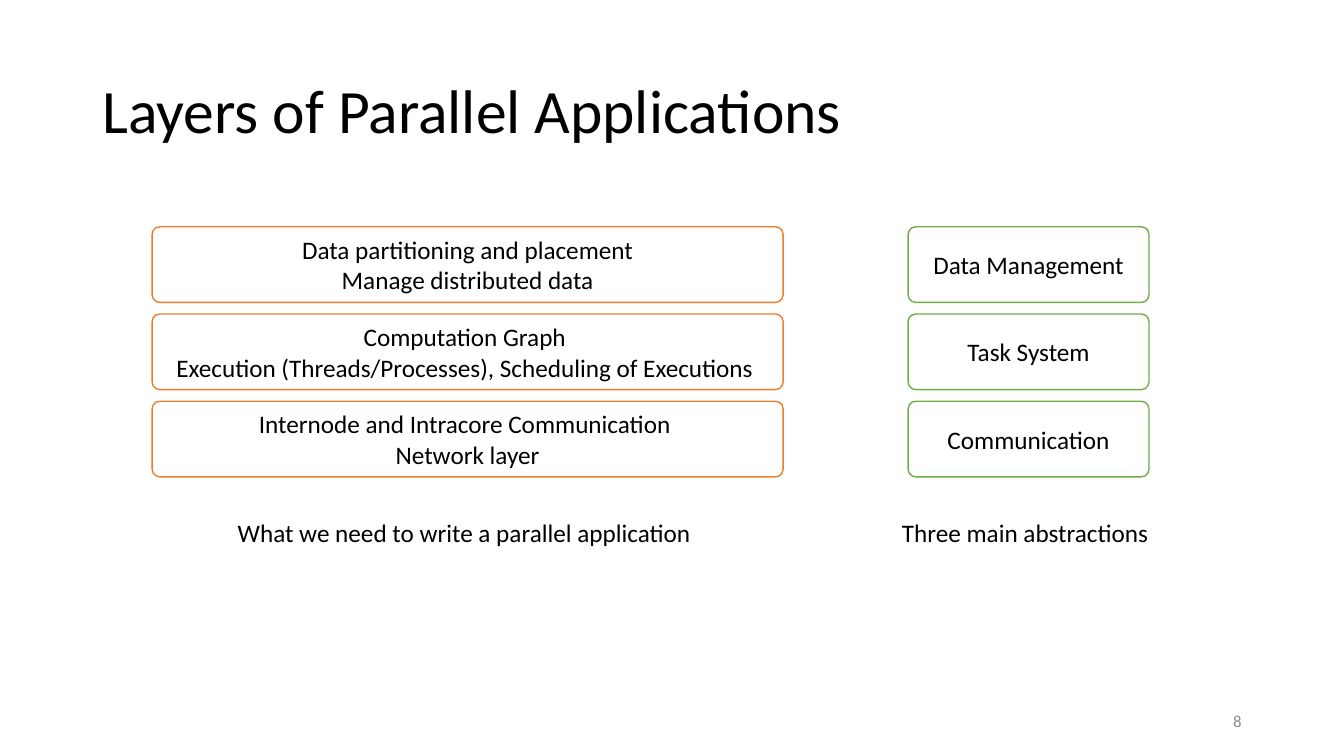
from dataclasses import dataclass

import pptx
import pptx.dml.color
import pptx.enum.shapes
import pptx.enum.text
import pptx.util

Pt = pptx.util.Pt
ALIGN = pptx.enum.text.PP_ALIGN
ANCHOR = pptx.enum.text.MSO_ANCHOR

FONT = "Calibri"
COLORS = {
    "text": "000000",
    "page number": "8C8C8C",
    "box": "FFFFFF",
    "needs": "ED7D31",
    "abstractions": "70AD47",
}
LAYER_TOP, LAYER_PITCH, LAYER_HEIGHT = 162, 62.3, 54
CAPTION_TOP, CAPTION_HEIGHT = 365.8, 29


@dataclass(frozen=True)
class LayerStack:
    """A column of layers, top to bottom, with a caption underneath."""
    left: float
    width: float
    color: str
    layers: tuple[tuple[str, ...], ...]
    caption: str
    caption_left: float
    caption_width: float


STACKS = (
    LayerStack(
        108.7, 450.7, "needs",
        (
            ("Data partitioning and placement", "Manage distributed data"),
            ("Computation Graph ",
             "Execution (Threads/Processes), Scheduling of Executions "),
            ("Internode and Intracore Communication ", "Network layer"),
        ),
        "What we need to write a parallel application", 162.7, 342,
    ),
    LayerStack(
        648.7, 172, "abstractions",
        (("Data Management",), ("Task System",), ("Communication",)),
        "Three main abstractions", 637.2, 192.2,
    ),
)


def rgb(name: str) -> pptx.dml.color.RGBColor:
    return pptx.dml.color.RGBColor.from_string(COLORS[name])


def write(frame, lines: tuple[str, ...], size: float = 18, color: str = "text",
          align=ALIGN.LEFT, anchor=ANCHOR.MIDDLE, wrap: bool = True) -> None:
    frame.word_wrap = wrap
    frame.vertical_anchor = anchor
    for index, line in enumerate(lines):
        paragraph = frame.add_paragraph() if index else frame.paragraphs[0]
        paragraph.alignment = align
        run = paragraph.add_run()
        run.text = line
        run.font.name = FONT
        run.font.size = Pt(size)
        run.font.color.rgb = rgb(color)


def draw_stack(slide, stack: LayerStack) -> None:
    for row, lines in enumerate(stack.layers):
        layer = slide.shapes.add_shape(
            pptx.enum.shapes.MSO_SHAPE.ROUNDED_RECTANGLE,
            Pt(stack.left), Pt(LAYER_TOP + row * LAYER_PITCH),
            Pt(stack.width), Pt(LAYER_HEIGHT))
        layer.adjustments[0] = 0.1
        layer.shadow.inherit = False
        layer.fill.solid()
        layer.fill.fore_color.rgb = rgb("box")
        layer.line.color.rgb = rgb(stack.color)
        layer.line.width = Pt(1)
        write(layer.text_frame, lines, align=ALIGN.CENTER)

    caption = slide.shapes.add_textbox(
        Pt(stack.caption_left), Pt(CAPTION_TOP),
        Pt(stack.caption_width), Pt(CAPTION_HEIGHT))
    write(caption.text_frame, (stack.caption,), anchor=ANCHOR.TOP, wrap=False)
    caption.text_frame.auto_size = pptx.enum.text.MSO_AUTO_SIZE.SHAPE_TO_FIT_TEXT


def main() -> None:
    deck = pptx.Presentation()
    deck.slide_width, deck.slide_height = Pt(960), Pt(540)
    slide = deck.slides.add_slide(deck.slide_layouts.get_by_name("Title Only"))

    title = slide.shapes.title
    title.left, title.top = Pt(66), Pt(28.8)
    title.width, title.height = Pt(828), Pt(104.4)
    title.text_frame.auto_size = pptx.enum.text.MSO_AUTO_SIZE.NONE
    write(title.text_frame, ("Layers of Parallel Applications",), size=44)
    title.text_frame.paragraphs[0].line_spacing = 0.9

    for stack in STACKS:
        draw_stack(slide, stack)

    page_number = slide.shapes.add_textbox(Pt(678), Pt(500.5), Pt(216), Pt(28.8))
    write(page_number.text_frame, ("8",), size=12, color="page number",
          align=ALIGN.RIGHT)

    deck.save("out.pptx")


if __name__ == "__main__":
    main()
